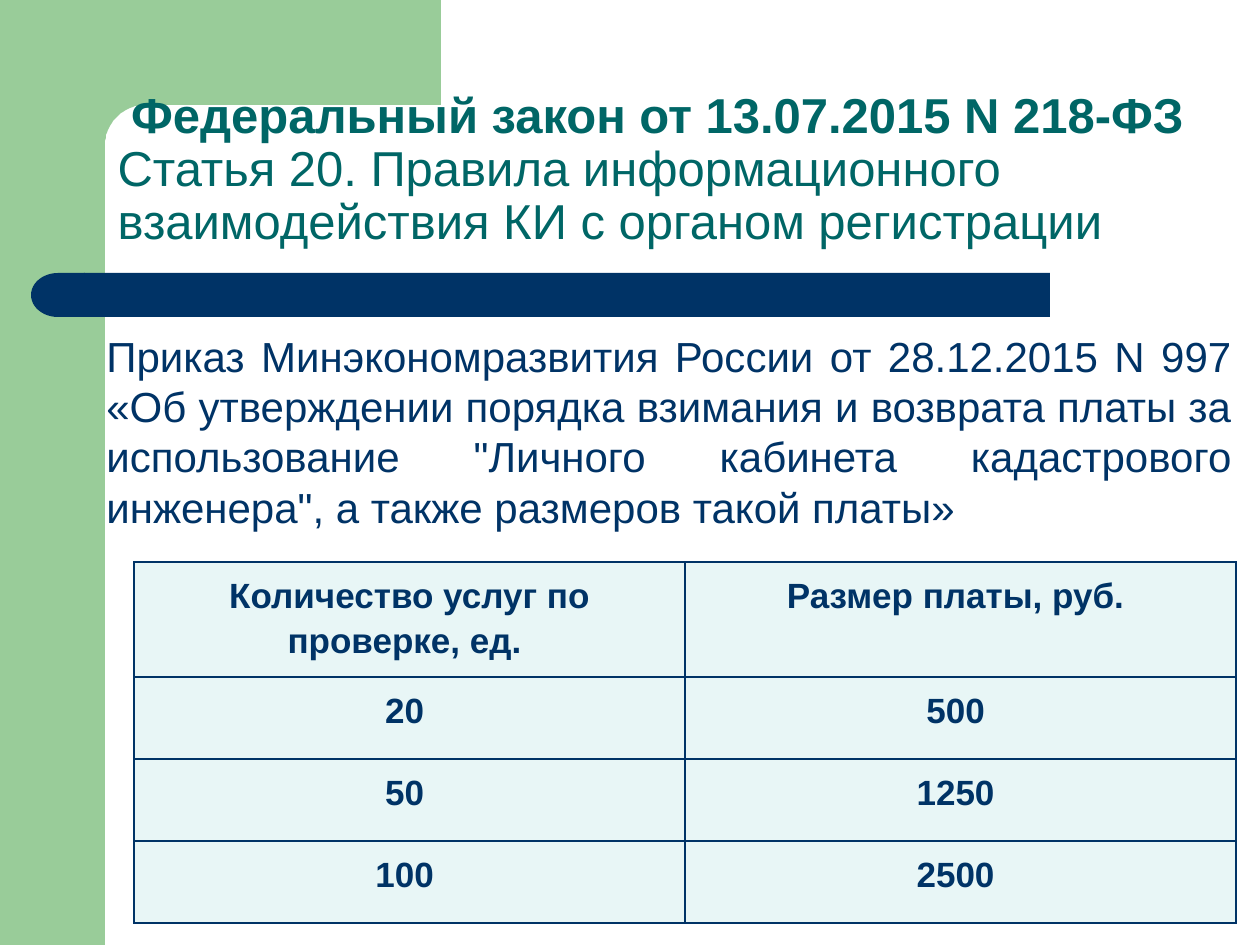
from dataclasses import dataclass
from math import cos, pi, sin

from lxml.etree import SubElement
from pptx import Presentation
from pptx.dml.color import RGBColor
from pptx.enum.shapes import MSO_SHAPE
from pptx.enum.text import MSO_ANCHOR, MSO_AUTO_SIZE, PP_ALIGN
from pptx.oxml.ns import qn
from pptx.util import Emu, Pt

SCALE = 914400 / 126


@dataclass(frozen=True)
class Theme:
    green: RGBColor = RGBColor(0x99, 0xCC, 0x99)
    navy: RGBColor = RGBColor(0x00, 0x33, 0x66)
    teal: RGBColor = RGBColor(0x00, 0x66, 0x66)
    pale: RGBColor = RGBColor(0xE8, 0xF6, 0xF6)
    font: str = "Arial"
    head: int = 28
    body: int = 24
    cell: int = 20


@dataclass(frozen=True)
class Block:
    kind: MSO_SHAPE
    left: int
    top: int
    width: int
    height: int
    color: RGBColor
    turn: int = 0


THEME = Theme()
BLOCKS = [
    Block(MSO_SHAPE.RECTANGLE, 0, 0, 105, 945, THEME.green),
    Block(MSO_SHAPE.RECTANGLE, 84, 273, 966, 44, THEME.navy),
    Block(MSO_SHAPE.FLOWCHART_DELAY, 31, 273, 54, 44, THEME.navy, 180),
]
ROWS = [
    ("Количество услуг по проверке, ед. ", "Размер платы, руб. "),
    ("20 ", "500 "),
    ("50 ", "1250 "),
    ("100 ", "2500 "),
]
HEIGHTS = [115, 82, 82, 82]


def px(count: int) -> Emu:
    return Emu(round(count * SCALE))


def paint(shape, color: RGBColor) -> None:
    shape.shadow.inherit = False
    shape.fill.solid()
    shape.fill.fore_color.rgb = color
    shape.line.fill.background()


def style(para, size: int, color: RGBColor, align: PP_ALIGN) -> None:
    para.alignment = align
    para.font.name = THEME.font
    para.font.size = Pt(size)
    para.font.color.rgb = color


def draw_block(slide, block: Block) -> None:
    shape = slide.shapes.add_shape(
        block.kind, px(block.left), px(block.top), px(block.width), px(block.height)
    )
    shape.rotation = block.turn
    paint(shape, block.color)


def draw_corner(slide) -> None:
    mid, rad, steps = 146, 41, 24
    turns = [pi / 2 * step / steps for step in range(steps + 1)]
    arc = [(mid - rad * sin(turn), mid - rad * cos(turn)) for turn in turns]
    points = [(441, 105), *arc, (105, 161), (63, 161), (63, 0)]
    form = slide.shapes.build_freeform(441, 0, scale=SCALE)
    form.add_line_segments(points, close=True)
    paint(form.convert_to_shape(), THEME.green)


def draw_title(slide) -> None:
    title = slide.shapes.title
    title.left, title.top = px(105), px(86)
    title.width, title.height = px(1142), px(169)
    frame = title.text_frame
    frame.auto_size = MSO_AUTO_SIZE.NONE
    frame.word_wrap = True
    frame.vertical_anchor = MSO_ANCHOR.MIDDLE
    para = frame.paragraphs[0]
    style(para, THEME.head, THEME.teal, PP_ALIGN.LEFT)
    para.line_spacing = 0.9
    law = para.add_run()
    law.text = " Федеральный закон от 13.07.2015 N 218-ФЗ"
    law.font.bold = True
    para.add_line_break()
    rule = para.add_run()
    rule.text = "Статья 20. Правила информационного взаимодействия КИ с органом регистрации"


def draw_body(slide) -> None:
    frame = slide.shapes.add_textbox(px(94), px(324), px(1150), px(217)).text_frame
    frame.word_wrap = True
    para = frame.paragraphs[0]
    para.text = (
        "Приказ Минэкономразвития России от 28.12.2015 N 997 "
        "«Об утверждении порядка взимания и возврата платы за использование "
        '"Личного кабинета кадастрового инженера", а также размеров такой платы»'
    )
    style(para, THEME.body, THEME.navy, PP_ALIGN.JUSTIFY)


def draw_cell(cell, text: str) -> None:
    cell.margin_left = cell.margin_right = px(5)
    cell.margin_top = cell.margin_bottom = px(9)
    props = cell._tc.get_or_add_tcPr()
    for side in ("a:lnL", "a:lnR", "a:lnT", "a:lnB"):
        line = SubElement(props, qn(side), w=str(Pt(1)))
        fill = SubElement(line, qn("a:solidFill"))
        SubElement(fill, qn("a:srgbClr"), val=str(THEME.navy))
    cell.fill.solid()
    cell.fill.fore_color.rgb = THEME.pale
    para = cell.text_frame.paragraphs[0]
    para.text = text
    style(para, THEME.cell, THEME.navy, PP_ALIGN.CENTER)
    para.font.bold = True
    para.line_spacing = 1.15


def draw_table(slide) -> None:
    table = slide.shapes.add_table(
        len(ROWS), 2, px(134), px(562), px(1102), px(sum(HEIGHTS))
    ).table
    table.first_row = table.horz_banding = False
    for row, height, texts in zip(table.rows, HEIGHTS, ROWS):
        row.height = px(height)
        for cell, text in zip(row.cells, texts):
            draw_cell(cell, text)


def main() -> None:
    deck = Presentation()
    deck.slide_width, deck.slide_height = px(1260), px(945)
    slide = deck.slides.add_slide(deck.slide_layouts[5])
    draw_corner(slide)
    for block in BLOCKS:
        draw_block(slide, block)
    title = slide.shapes.title
    slide.shapes._spTree.append(title._element)
    draw_title(slide)
    draw_body(slide)
    draw_table(slide)
    deck.save("out.pptx")


if __name__ == "__main__":
    main()
